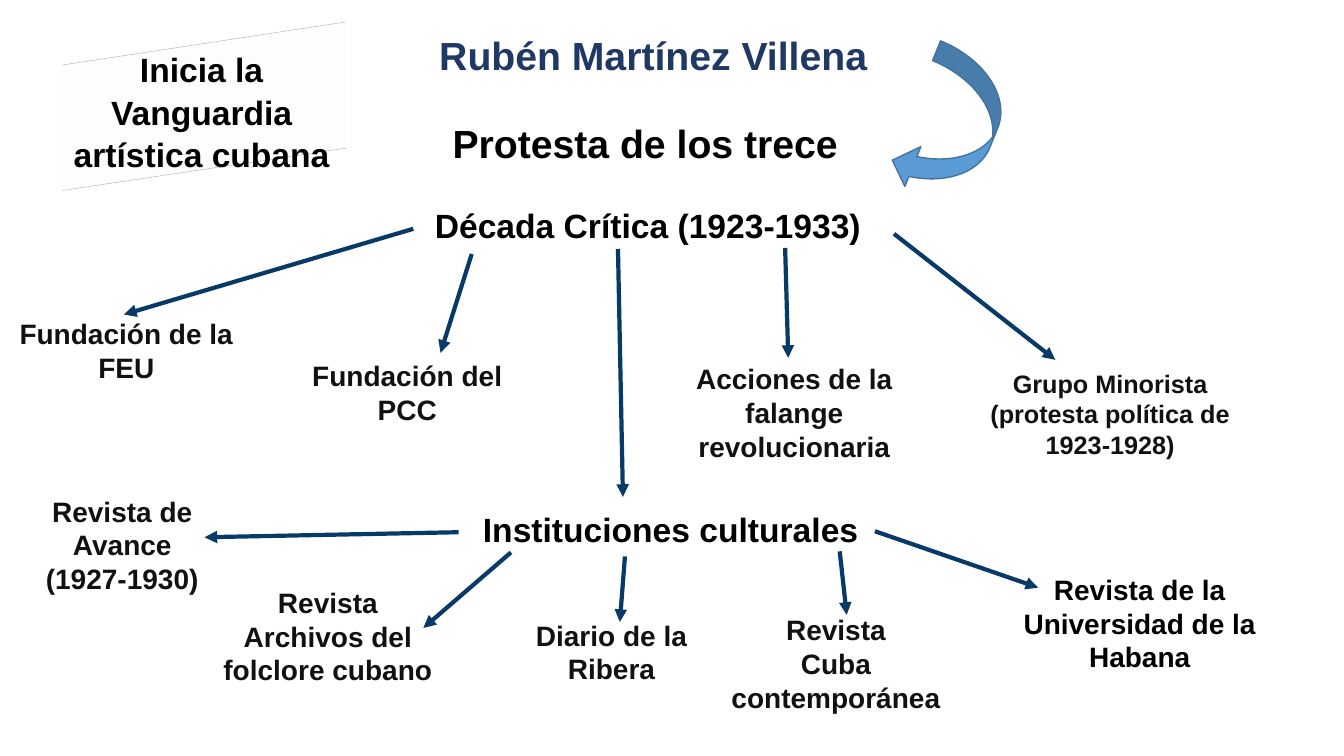
from lxml import etree
from pptx import Presentation
from pptx.dml.color import RGBColor
from pptx.enum.shapes import MSO_CONNECTOR, MSO_SHAPE
from pptx.enum.text import PP_ALIGN
from pptx.oxml.ns import qn
from pptx.util import Inches, Pt

STRAIGHT = MSO_CONNECTOR.STRAIGHT
CURVED_ARROW = MSO_SHAPE.CURVED_DOWN_ARROW
CENTER = PP_ALIGN.CENTER

WIDTH, HEIGHT = Inches(13.33), Inches(7.5)
COLORS = {
    "title": "203864",
    "black": "000000",
    "body": "111111",
    "arrow": "083A68",
    "curve": "5B9BD5",
    "curve_line": "43739E",
    "panel": "FDFDFD",
    "edge": "A6A6A6",
    "page": "FFFFFF",
}

HEADINGS = [
    ("Rubén Martínez Villena", 48.6, 3.5, 41, 7.6, 28, "title"),
    ("Protesta de los trece", 48, 15.1, 42.4, 7.6, 28, "black"),
    ("Década Crítica (1923-1933)", 48.2, 26.5, 54, 6.7, 24, "black"),
    ("Instituciones culturales", 49.9, 66.7, 36.7, 6.7, 24, "black"),
]
EVENTS = [
    ("Fundación de la FEU", 9.4, 41.2, 19.1, 10.3, 20, "body"),
    ("Fundación del PCC", 30.3, 46.8, 19.1, 10.3, 20, "body"),
    ("Acciones de la falange revolucionaria", 59.1, 47.2, 19.1, 14.8, 20, "body"),
    ("Grupo Minorista\n(protesta política de 1923-1928)", 82.6, 48.1, 21.8, 13.5, 18, "body"),
]
JOURNALS = [
    ("Revista de\nAvance\n(1927-1930)", 9.1, 64.7, 13, 14.8, 20, "body"),
    ("Revista\nArchivos del folclore cubano", 24.4, 76.8, 18.4, 14.8, 20, "body"),
    ("Diario de la\nRibera", 45.5, 81.1, 22.4, 10.3, 20, "body"),
    ("Revista\nCuba contemporánea", 62.2, 80.4, 18.4, 14.8, 20, "body"),
    ("Revista de la\nUniversidad de la Habana", 84.8, 75.1, 25, 14.8, 20, "black"),
]
VANGUARD = ("Inicia la Vanguardia artística cubana", 15, 5.6, 21.8, 17.5, 24, "black")

ARROWS = [
    (30.75, 30.27, 9.22, 41.6),
    (35.1, 33.6, 32.78, 46.67),
    (45.98, 32.93, 46.35, 65.73),
    (58.42, 32.8, 58.65, 47.33),
    (66.52, 30.93, 78.52, 47.6),
    (34.12, 70.4, 15.22, 71.07),
    (38.02, 73.07, 31.5, 83.07),
    (46.5, 73.6, 46.12, 82.27),
    (62.48, 72.93, 63, 81.33),
    (65.1, 70.27, 77.25, 77.73),
]
PANEL = [(4.65, 8.6), (25.75, 2.9), (25.75, 19.6), (4.65, 25.2)]


def color(name):
    return RGBColor.from_string(COLORS[name])


def across(share):
    return round(WIDTH * share / 100)


def down(share):
    return round(HEIGHT * share / 100)


def paint(shape, fill, line=None):
    shape.shadow.inherit = False
    shape.fill.solid()
    shape.fill.fore_color.rgb = color(fill)
    if line:
        shape.line.color.rgb = color(line)
        shape.line.width = Pt(1)
    else:
        shape.line.fill.background()


def add_text(page, text, center, top, width, height, size, tone, spacing=1.0):
    box = page.shapes.add_textbox(
        across(center - width / 2), down(top), across(width), down(height))
    frame = box.text_frame
    frame.word_wrap = True
    frame.text = text
    formats = {"name": "Arial", "size": Pt(size), "bold": True}
    for para in frame.paragraphs:
        para.alignment = CENTER
        para.line_spacing = spacing
        for span in para.runs:
            for key, value in formats.items():
                setattr(span.font, key, value)
            span.font.color.rgb = color(tone)


def add_line(page, ends, tone, weight, arrowhead=False):
    x1, y1, x2, y2 = ends
    line = page.shapes.add_connector(
        STRAIGHT, across(x1), down(y1), across(x2), down(y2))
    line.line.color.rgb = color(tone)
    line.line.width = Pt(weight)
    if arrowhead:
        outline = line.line._get_or_add_ln()
        etree.SubElement(outline, qn("a:tailEnd"), type="triangle")
    etree.SubElement(line._element.spPr, qn("a:effectLst"))


def add_panel(page):
    corners = [(across(x), down(y)) for x, y in PANEL]
    builder = page.shapes.build_freeform(*corners[0])
    builder.add_line_segments(corners[1:], close=True)
    paint(builder.convert_to_shape(), "panel")
    for start, end in (PANEL[:2], PANEL[2:]):
        add_line(page, start + end, "edge", 0.25)


def add_curved_arrow(page):
    curve = page.shapes.add_shape(
        CURVED_ARROW, across(65.25), down(11.07), across(11.18), down(11.33))
    curve.rotation = 112
    paint(curve, "curve", "curve_line")


def main():
    deck = Presentation()
    deck.slide_width, deck.slide_height = WIDTH, HEIGHT
    page = deck.slides.add_slide(deck.slide_layouts[6])
    page.background.fill.solid()
    page.background.fill.fore_color.rgb = color("page")
    for ends in ARROWS:
        add_line(page, ends, "arrow", 3, arrowhead=True)
    for entry in HEADINGS + EVENTS + JOURNALS:
        add_text(page, *entry)
    add_curved_arrow(page)
    add_panel(page)
    add_text(page, *VANGUARD, spacing=1.05)
    deck.save("out.pptx")


if __name__ == "__main__":
    main()
